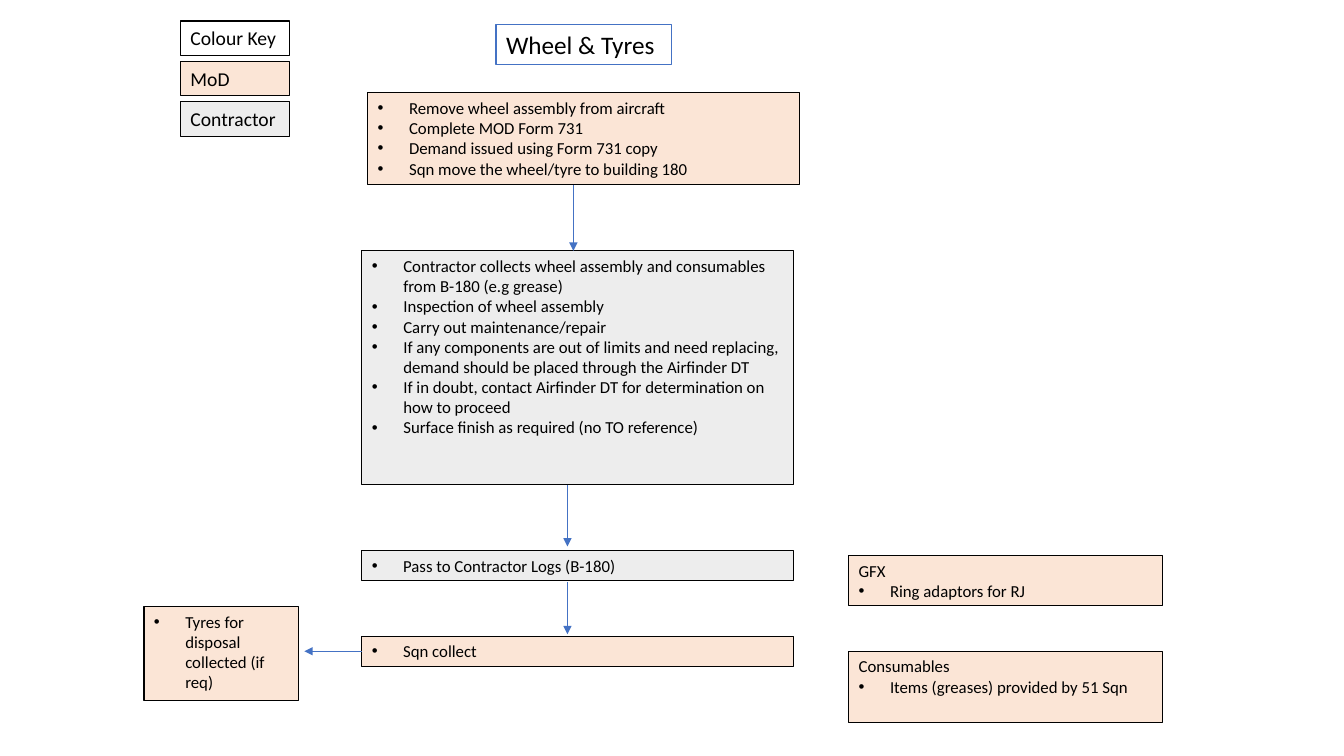
import pptx
import pptx.dml.color
import pptx.enum.shapes
import pptx.enum.text
import pptx.oxml
import pptx.oxml.ns
import pptx.util
from pptx.util import Cm

BLACK, BLUE, MOD, CONTRACTOR = "000000", "4472C4", "FBE5D6", "EDEDED"

TITLE = "Wheel & Tyres"
COLOUR_KEY = [("Colour Key", None), ("MoD", MOD), ("Contractor", CONTRACTOR)]
MAINTENANCE = [
    "Contractor collects wheel assembly and consumables from B-180 (e.g grease)",
    "Inspection of wheel assembly",
    "Carry out maintenance/repair",
    "If any components are out of limits and need replacing, "
    "demand should be placed through the Airfinder DT",
    "If in doubt, contact Airfinder DT for determination on how to proceed",
    "Surface finish as required (no TO reference)",
]
REMOVAL = [
    "Remove wheel assembly from aircraft",
    "Complete MOD Form 731",
    "Demand issued using Form 731 copy",
    "Sqn move the wheel/tyre to building 180",
]

STEP_LEFT, STEP_WIDTH, STEP_HEIGHT = 9.12, 10.87, 0.76
SIDE_LEFT, SIDE_WIDTH = 21.39, 7.92
ARROW_X = 14.3
COLLECT_TOP = 16.03
COLLECT_MIDDLE = COLLECT_TOP + STEP_HEIGHT / 2

MAINTENANCE_AREA = (STEP_LEFT, 6.32, STEP_WIDTH, 5.89)
BOXES = [
    ((9.27, 2.34, STEP_WIDTH, 2.31), MOD, None, REMOVAL),
    ((STEP_LEFT, 13.87, STEP_WIDTH, STEP_HEIGHT), CONTRACTOR, None,
     ["Pass to Contractor Logs (B-180)"]),
    ((STEP_LEFT, COLLECT_TOP, STEP_WIDTH, STEP_HEIGHT), MOD, None, ["Sqn collect"]),
    ((3.63, 15.29, 3.89, 2.36), MOD, None, ["Tyres for disposal collected (if req)"]),
    ((SIDE_LEFT, 14, SIDE_WIDTH, 1.27), MOD, "GFX", ["Ring adaptors for RJ"]),
    ((SIDE_LEFT, 16.41, SIDE_WIDTH, 1.8), MOD, "Consumables",
     ["Items (greases) provided by 51 Sqn"]),
]
ARROWS = [
    (14.45, 4.67, 14.45, 6.32),
    (ARROW_X, 12.22, ARROW_X, 13.77),
    (ARROW_X, 14.66, ARROW_X, 15.98),
    (STEP_LEFT, COLLECT_MIDDLE, 7.67, COLLECT_MIDDLE),
]


def colour(value):
    return pptx.dml.color.RGBColor.from_string(value)


def add_element(parent, tag, **attributes):
    element = pptx.oxml.parse_xml(f"<a:{tag} {pptx.oxml.ns.nsdecls('a')}/>")
    for name, value in attributes.items():
        element.set(name, str(value))
    parent.append(element)


def set_bullet(paragraph, bulleted):
    properties = paragraph._p.get_or_add_pPr()
    indent = Cm(0.79) if bulleted else 0
    properties.set("marL", str(indent))
    properties.set("indent", str(-indent))
    if bulleted:
        add_element(properties, "buFont", typeface="Arial")
        add_element(properties, "buChar", char="•")
    else:
        add_element(properties, "buNone")


def format_box(shape, area, fill, heading, bullets, size=12, outline=BLACK):
    shape.left, shape.top, shape.width, shape.height = map(Cm, area)
    if fill:
        shape.fill.solid()
        shape.fill.fore_color.rgb = colour(fill)
    else:
        shape.fill.background()
    shape.line.color.rgb = colour(outline)
    shape.line.width = pptx.util.Pt(0.75)
    frame = shape.text_frame
    frame.word_wrap = True
    frame.auto_size = pptx.enum.text.MSO_AUTO_SIZE.NONE
    frame.vertical_anchor = pptx.enum.text.MSO_ANCHOR.TOP
    headings = [heading] if heading else []
    frame.text = "\n".join(headings + bullets)
    for index, paragraph in enumerate(frame.paragraphs):
        paragraph.alignment = pptx.enum.text.PP_ALIGN.LEFT
        paragraph.space_before = pptx.util.Pt(0)
        paragraph.font.name = "Calibri"
        paragraph.font.size = pptx.util.Pt(size)
        paragraph.font.color.rgb = colour(BLACK)
        set_bullet(paragraph, index >= len(headings))


def add_box(slide, area, *content, **style):
    shape = slide.shapes.add_shape(
        pptx.enum.shapes.MSO_SHAPE.RECTANGLE, *map(Cm, area))
    shape.shadow.inherit = False
    format_box(shape, area, *content, **style)


def add_arrow(slide, ends):
    arrow = slide.shapes.add_connector(
        pptx.enum.shapes.MSO_CONNECTOR.STRAIGHT, *map(Cm, ends))
    arrow.line.color.rgb = colour(BLUE)
    arrow.line.width = pptx.util.Pt(0.5)
    add_element(arrow.line._get_or_add_ln(), "tailEnd", type="triangle")
    add_element(arrow._element.spPr, "effectLst")


def main():
    presentation = pptx.Presentation()
    presentation.slide_width, presentation.slide_height = Cm(33.87), Cm(19.05)
    slide = presentation.slides.add_slide(presentation.slide_layouts[1])
    format_box(slide.shapes.title, (12.5, 0.61, 4.42, 1.02), None, TITLE, [],
               size=18, outline=BLUE)
    format_box(slide.placeholders[1], MAINTENANCE_AREA, CONTRACTOR, None, MAINTENANCE)
    for row, (label, fill) in enumerate(COLOUR_KEY):
        add_box(slide, (4.55, 0.53 + 1.02 * row, 2.74, 0.86), fill, label, [], size=14)
    for box in BOXES:
        add_box(slide, *box)
    for ends in ARROWS:
        add_arrow(slide, ends)
    presentation.save("out.pptx")


if __name__ == "__main__":
    main()
